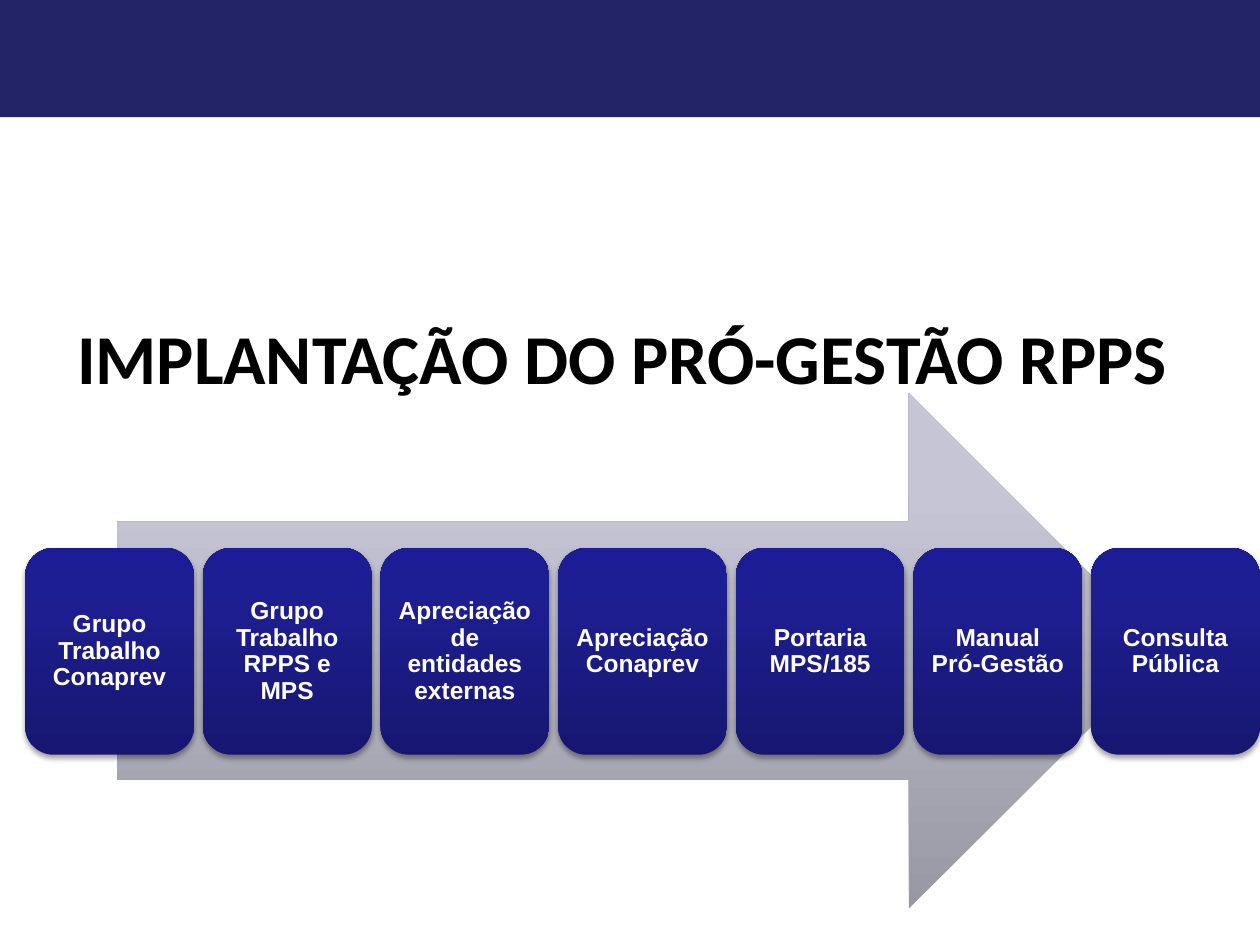
from lxml import etree
from pptx import Presentation
from pptx.dml.color import RGBColor as RGB
from pptx.enum.shapes import MSO_SHAPE as Shape
from pptx.enum.text import MSO_ANCHOR as Anchor, PP_ALIGN as Align, MSO_AUTO_SIZE as Fit
from pptx.oxml.ns import qn
from pptx.util import Inches, Pt

HUES = {"band": "222267", "title": "000000", "label": "FFFFFF", "shade": "000000"}
# Gradient stops as (percent, hex), from bottom to top
ARROW = [(0, "9898A4"), (80, "C5C5D5"), (100, "C6C6D6")]
CARD = [(0, "171771"), (80, "1E1E93"), (100, "1C1C96")]
STEPS = [
    "Grupo Trabalho Conaprev",
    "Grupo Trabalho RPPS e MPS",
    "Apreciação de entidades externas",
    "Apreciação Conaprev",
    "Portaria MPS/185",
    "Manual Pró-Gestão",
    "Consulta Pública",
]


class Deck:
    def __init__(self, wide, high):
        self.prs = Presentation()
        self.prs.slide_width, self.prs.slide_height = Inches(wide), Inches(high)
        self.slide = self.prs.slides.add_slide(self.prs.slide_layouts[5])

    def label(self, frame, text, font, size, hue, inset):
        frame.word_wrap = True
        frame.margin_left = frame.margin_right = Inches(inset)
        para = frame.paragraphs[0]
        para.text = text
        para.alignment = Align.CENTER
        para.font.name, para.font.size, para.font.bold = font, Pt(size), True
        para.font.color.rgb = RGB.from_string(HUES[hue])
        return para

    def title(self, text, left, top, wide, high):
        box = self.slide.shapes.title
        box.left, box.top = Inches(left), Inches(top)
        box.width, box.height = Inches(wide), Inches(high)
        frame = box.text_frame
        frame.auto_size = Fit.NONE
        frame.vertical_anchor = Anchor.TOP
        self.label(frame, text, "Calibri", 40, "title", 0.1)

    def shape(self, kind, left, top, wide, high):
        item = self.slide.shapes.add_shape(
            kind, Inches(left), Inches(top), Inches(wide), Inches(high))
        item.shadow.inherit = False
        item.line.fill.background()
        return item

    def band(self, *place):
        item = self.shape(Shape.RECTANGLE, *place)
        item.fill.solid()
        item.fill.fore_color.rgb = RGB.from_string(HUES["band"])

    def blend(self, kind, stops, *place):
        item = self.shape(kind, *place)
        item.fill.gradient()
        item.fill.gradient_angle = 90
        rows = item.element.spPr.find(".//" + qn("a:gsLst"))
        for row in list(rows):
            rows.remove(row)
        for part, hue in stops:
            row = etree.SubElement(rows, qn("a:gs"), pos=str(part * 1000))
            etree.SubElement(row, qn("a:srgbClr"), val=hue)
        return item

    def shade(self, item):
        pool = item.element.spPr.find(qn("a:effectLst"))
        drop = etree.SubElement(
            pool, qn("a:outerShdw"), blurRad=str(Pt(3.1)), dist=str(Pt(1.8)),
            dir="5400000", rotWithShape="0")
        tint = etree.SubElement(drop, qn("a:srgbClr"), val=HUES["shade"])
        etree.SubElement(tint, qn("a:alpha"), val="35000")

    def card(self, text, *place):
        item = self.blend(Shape.ROUNDED_RECTANGLE, CARD, *place)
        self.shade(item)
        frame = item.text_frame
        frame.vertical_anchor = Anchor.MIDDLE
        frame.margin_top = frame.margin_bottom = Inches(0.06)
        para = self.label(frame, text, "Arial", 14, "label", 0.06)
        para.line_spacing = 0.9


def main():
    deck = Deck(10, 7.5)

    # Title
    deck.title("IMPLANTAÇÃO DO PRÓ-GESTÃO RPPS ", 0, 2.45, 10, 2.13)

    # Arrow behind the steps
    deck.blend(Shape.RIGHT_ARROW, ARROW, 0.93, 3.12, 8.33, 4.09)

    # Steps, left to right
    for num, step in enumerate(STEPS):
        deck.card(step, 0.2 + 1.41 * num, 4.35, 1.34, 1.64)

    # Top band
    deck.band(0, 0, 10, 0.93)

    deck.prs.save("out.pptx")


if __name__ == "__main__":
    main()
